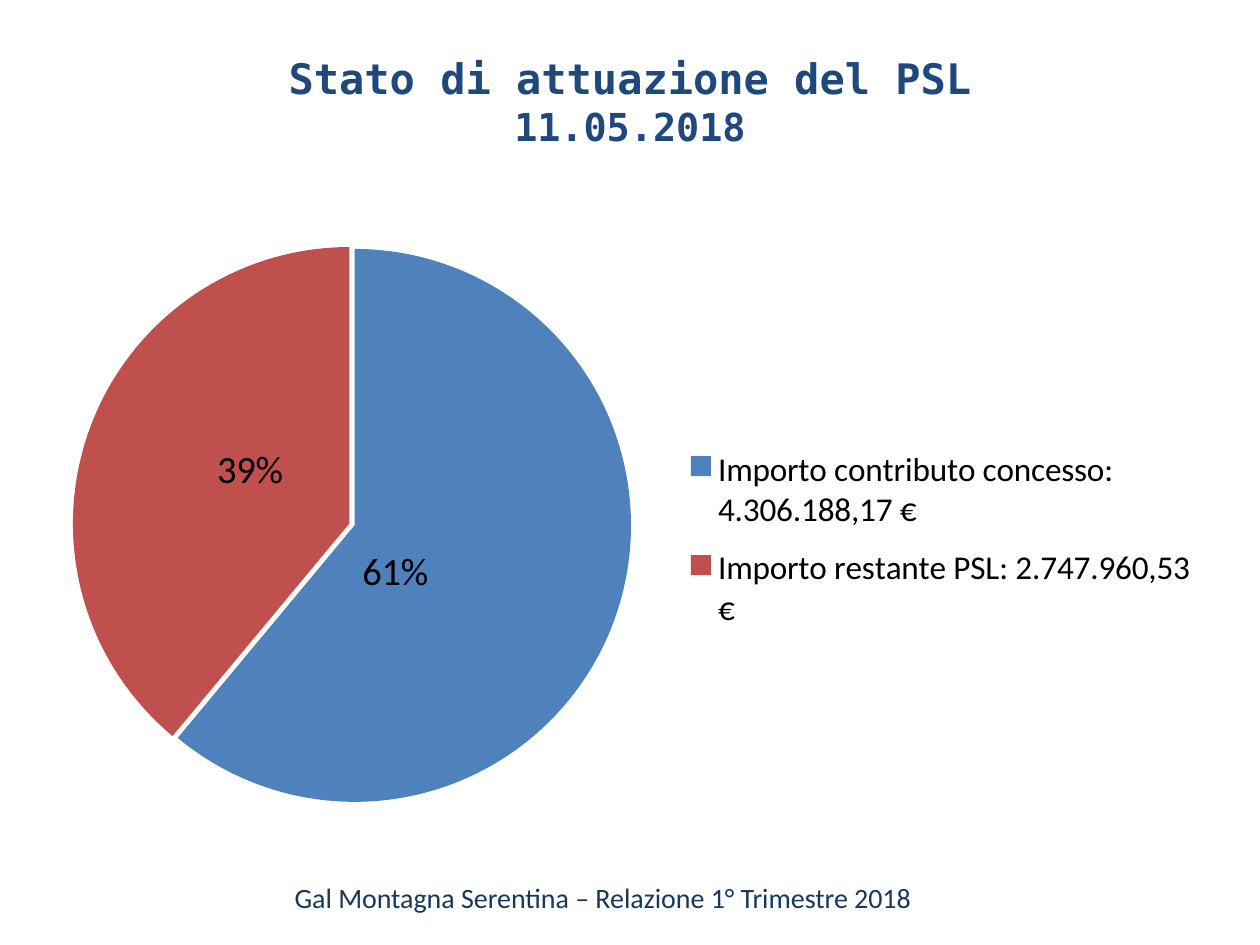
from lxml import etree
from pptx import Presentation
from pptx.chart.data import CategoryChartData
from pptx.dml.color import RGBColor
from pptx.enum.chart import XL_CHART_TYPE, XL_LABEL_POSITION, XL_LEGEND_POSITION
from pptx.enum.text import MSO_ANCHOR, PP_ALIGN
from pptx.oxml.ns import qn
from pptx.util import Inches, Pt

PIE = XL_CHART_TYPE.PIE
LABEL_CENTER = XL_LABEL_POSITION.CENTER
LEGEND_RIGHT = XL_LEGEND_POSITION.RIGHT
MIDDLE = MSO_ANCHOR.MIDDLE
LEFT, CENTER = PP_ALIGN.LEFT, PP_ALIGN.CENTER
EURO_FORMAT = '"€"\\ #,##0.00'

SLICES = [
    ("Importo contributo concesso: 4.306.188,17 €", 4306188, "4F81BD", "61%", (-0.073, 0)),
    ("Importo restante PSL: 2.747.960,53 €", 2747961, "C0504D", "39%", (0.025, -0.009)),
]


def color(value):
    return RGBColor.from_string(value)


def set_layout(parent, index, **values):
    for old in parent.findall(qn("c:layout")):
        parent.remove(old)
    layout = etree.Element(qn("c:layout"))
    manual = etree.SubElement(layout, qn("c:manualLayout"))
    for name, value in values.items():
        etree.SubElement(manual, qn(f"c:{name}")).set("val", str(value))
    parent.insert(index, layout)


class SlideBuilder:
    body_font = "Calibri"
    title_font = "DejaVu Sans Mono"

    def __init__(self, deck):
        self.deck = deck
        self.slide = deck.slides.add_slide(deck.slide_layouts[6])

    def area(self, left, top, width, height):
        across, down = self.deck.slide_width, self.deck.slide_height
        return [round(share * length) for share, length in
                zip((left, top, width, height), (across, down, across, down))]

    def style(self, font, **values):
        font.color.rgb = color(values.pop("color", "000000"))
        for name, value in {"name": self.body_font, **values}.items():
            setattr(font, name, value)

    def text(self, area, lines, align=LEFT, wrap=True, **values):
        box = self.slide.shapes.add_textbox(*self.area(*area))
        frame = box.text_frame
        frame.word_wrap = wrap
        frame.vertical_anchor = MIDDLE
        for number, (words, size) in enumerate(lines):
            para = frame.add_paragraph() if number else frame.paragraphs[0]
            para.alignment = align
            span = para.add_run()
            span.text = words
            self.style(span.font, size=Pt(size), **values)

    def pie(self, area, slices):
        data = CategoryChartData(number_format=EURO_FORMAT)
        data.categories = [entry[0] for entry in slices]
        data.add_series("Series 1", [entry[1] for entry in slices])
        chart = self.slide.shapes.add_chart(PIE, *self.area(*area), data).chart
        chart.has_title = False
        chart.has_legend = True
        chart.legend.position = LEGEND_RIGHT
        chart.legend.include_in_layout = False
        self.style(chart.font, size=Pt(18))
        self.style(chart.legend.font, size=Pt(19))
        plot = chart.plots[0]
        plot.vary_by_categories = True
        series = plot.series[0]
        labels = series.data_labels
        self.style(labels.font, size=Pt(22))
        settings = {"show_value": True, "show_percentage": True,
                    "number_format": EURO_FORMAT, "number_format_is_linked": False}
        for name, value in settings.items():
            setattr(labels, name, value)
        for number, (_, _, fill, label, _) in enumerate(slices):
            point = series.points[number]
            point.format.fill.solid()
            point.format.fill.fore_color.rgb = color(fill)
            span = point.data_label.text_frame.paragraphs[0].add_run()
            span.text = label
            self.style(span.font, size=Pt(22))
            point.data_label.position = LABEL_CENTER
        root = chart.element
        explosion = etree.Element(qn("c:explosion"))
        explosion.set("val", "1")
        root.xpath(".//c:dPt")[0].addprevious(explosion)
        for label, entry in zip(root.xpath(".//c:dLbl"), slices):
            set_layout(label, 1, x=entry[4][0], y=entry[4][1])
        set_layout(root.xpath(".//c:plotArea")[0], 0, layoutTarget="inner",
                   xMode="edge", yMode="edge", x=0.061, y=0.12, w=0.457, h=0.829)
        set_layout(root.xpath(".//c:legend")[0], 1, xMode="edge", yMode="edge",
                   x=0.565, y=0.397, w=0.41, h=0.32)


def main():
    deck = Presentation()
    deck.slide_width, deck.slide_height = Inches(10), Inches(7.5)
    builder = SlideBuilder(deck)
    builder.pie((-0.002, 0.174, 0.972, 0.713), SLICES)
    builder.text((0.047, 0.046, 0.906, 0.121),
                 [("Stato di attuazione del PSL", 24), ("11.05.2018", 22)],
                 align=CENTER, name=builder.title_font, color="1F497D", bold=True)
    builder.text((0.224, 0.925, 0.514, 0.049),
                 [("Gal Montagna Serentina – Relazione 1° Trimestre 2018", 16)],
                 wrap=False, color="17375E")
    deck.save("out.pptx")


if __name__ == "__main__":
    main()
